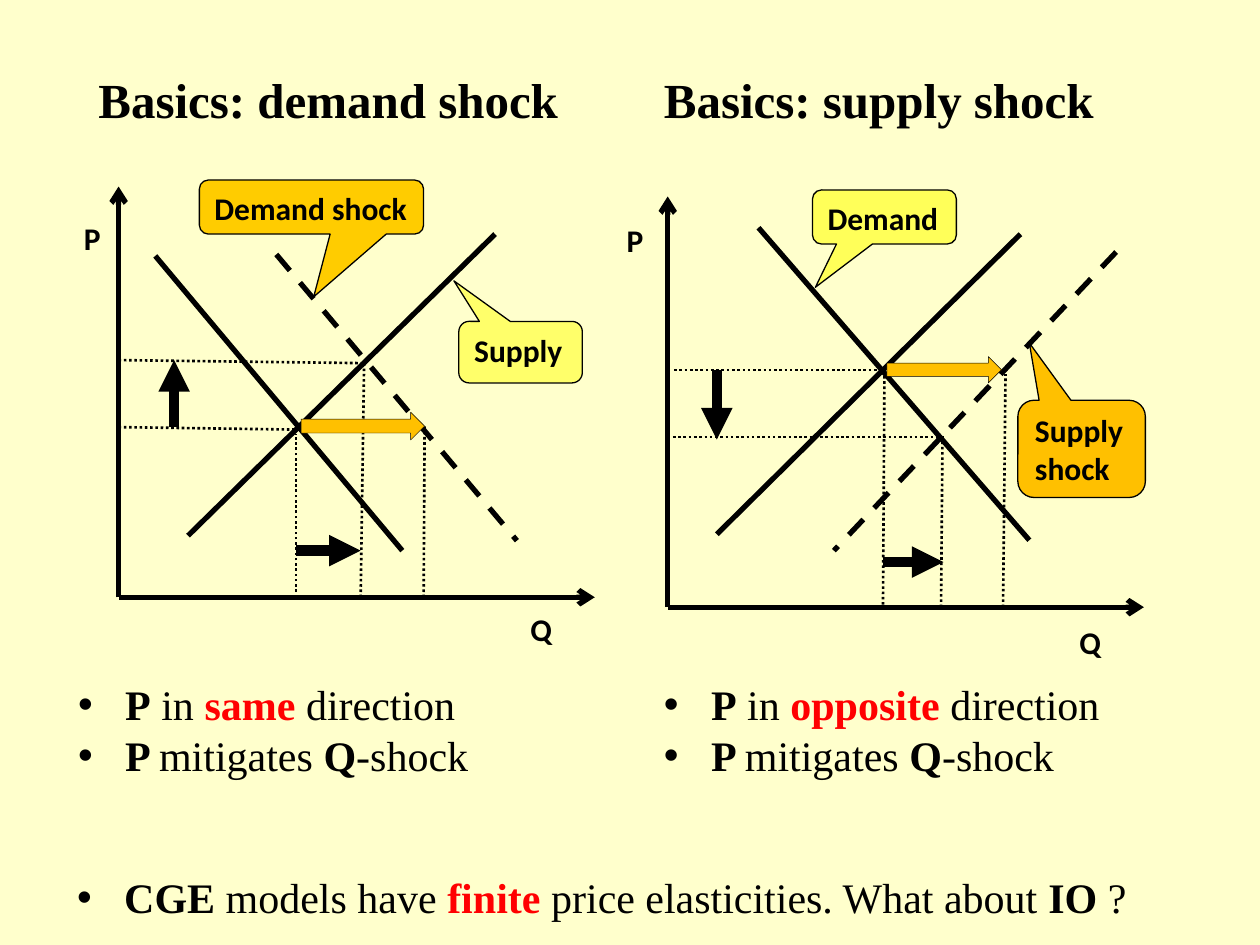
from dataclasses import dataclass

from lxml import etree
from pptx import Presentation
from pptx import util as u
from pptx.dml.color import RGBColor
from pptx.enum import dml, shapes, text
from pptx.oxml import ns


@dataclass(frozen=True)
class Theme:
    paper: str = "FFFFCC"
    ink: str = "000000"
    accent: str = "FF0000"
    shock: str = "FFC000"
    demand_shock: str = "FFCC00"
    supply: str = "FFFF6A"
    demand: str = "FFFF59"
    serif: str = "Times New Roman"
    sans: str = "Calibri"
    heading: float = 28
    body: float = 24
    label: float = 18


THEME = Theme()
CURVE = {"width": 3}
SHIFTED = {"width": 3, "dash": dml.MSO_LINE.DASH}
GUIDE = {"width": 1.5, "dash": dml.MSO_LINE.ROUND_DOT}
AXIS = {"width": 3, "head": "arrow"}
CHANGE = {"width": 6, "head": "triangle"}
AXIS_HEIGHT, AXIS_WIDTH = 8.28, 9.6

# Points are (right of, above) the origin of the axes, in cm.
# Callouts: text, left, top, width, height, tail x, tail y, fill, outlined.
DEMAND_MARKET = {
    "curves": [((0.74, 6.88), (5.72, 0.94)), ((7.59, 7.32), (1.4, 1.24))],
    "shifted": ((3.18, 6.91), (8.03, 1.14)),
    "guides": [((0, 3.43), (3.58, 3.38)), ((3.58, 0), (3.58, 3.3)),
               ((0, 4.78), (4.88, 4.72)), ((4.88, 0), (4.95, 4.72)),
               ((6.15, 0), (6.17, 3.45))],
    "changes": [((1.12, 3.43), (1.12, 4.78)), ((3.58, 0.94), (4.88, 0.94))],
    "shock": (3.68, 3.73, 2.49, 0.56),
    "callouts": [
        ("Demand shock", 1.63, 8.41, 4.52, 1.09, 0.01, 1.66, THEME.demand_shock, True),
        ("Supply", 6.86, 5.56, 2.49, 1.24, -0.54, -1.16, THEME.supply, True),
        ("P", -0.99, 7.8, 0.86, 0.99, -0.1, 0.02, THEME.paper, False),
        ("Q", 8, -0.08, 1.19, 1.07, -0.2, -0.17, THEME.paper, False)],
}
SUPPLY_MARKET = {
    "curves": [((1.83, 7.65), (7.29, 1.35)), ((7.11, 7.52), (0.99, 1.47))],
    "shifted": ((9.04, 7.16), (3.35, 1.14)),
    "guides": [((0.13, 4.78), (4.34, 4.78)), ((4.34, 0.05), (4.37, 4.78)),
               ((0, 3.43), (5.56, 3.43)), ((5.51, 0), (5.54, 3.43)),
               ((6.76, 0), (6.81, 4.7))],
    "changes": [((0.99, 4.78), (0.99, 3.38)), ((4.34, 0.91), (5.56, 0.91))],
    "shock": (4.42, 5.05, 2.31, 0.53),
    "callouts": [
        ("Demand", 2.92, 8.41, 2.9, 1.09, -0.48, 1.3, THEME.demand, True),
        ("Supply shock", 7.06, 4.17, 2.57, 1.96, -0.41, -1.09, THEME.shock, True),
        ("P", -1.12, 7.95, 0.86, 1.07, 0.02, -0.03, THEME.paper, False),
        ("Q", 8, -0.15, 1.04, 0.99, -0.05, -0.3, THEME.paper, False)],
}


def rgb(value):
    return RGBColor.from_string(value)


def add_run(paragraph, words, **look):
    run = paragraph.add_run()
    run.text = words
    run.font.color.rgb = rgb(look.pop("color", THEME.ink))
    for name, value in look.items():
        setattr(run.font, name, value)


def place(holder, box, **frame_format):
    """Move a placeholder to box and format its text frame."""
    for name, value in zip(("left", "top", "width", "height"), box):
        setattr(holder, name, u.Cm(value))
    for name, value in {"word_wrap": True, "margin_right": 0, **frame_format}.items():
        setattr(holder.text_frame, name, value)


def heading(holder, box, words):
    place(holder, box, vertical_anchor=text.MSO_ANCHOR.MIDDLE,
          auto_size=text.MSO_AUTO_SIZE.NONE)
    paragraph = holder.text_frame.paragraphs[0]
    paragraph.alignment = text.PP_ALIGN.LEFT
    paragraph.space_before = u.Pt(0)
    add_run(paragraph, words, name=THEME.serif, size=u.Pt(THEME.heading), bold=True)


def bullets(holder, box, points):
    """Fill a list; each point alternates bold and regular words, * marks the accent."""
    place(holder, box, vertical_anchor=text.MSO_ANCHOR.TOP,
          auto_size=text.MSO_AUTO_SIZE.SHAPE_TO_FIT_TEXT)
    frame = holder.text_frame
    for number, point in enumerate(points):
        paragraph = frame.paragraphs[0] if number == 0 else frame.add_paragraph()
        paragraph.alignment = text.PP_ALIGN.LEFT
        paragraph.space_before = u.Pt(0)
        props = paragraph._p.get_or_add_pPr()
        props.set("marL", str(u.Cm(0.95)))
        props.set("indent", str(-u.Cm(0.95)))
        etree.SubElement(props, ns.qn("a:buFont"), typeface="Arial")
        etree.SubElement(props, ns.qn("a:buChar"), char="•")
        for order, words in enumerate(point):
            color = THEME.accent if words.startswith("*") else THEME.ink
            add_run(paragraph, words.lstrip("*"), name=THEME.serif, color=color,
                    size=u.Pt(THEME.body), bold=order % 2 == 0)


def market(slide, left, base, content):
    """Draw one supply and demand diagram with its axes meeting at (left, base)."""
    parts = slide.shapes.add_group_shape().shapes

    def at(x, y):
        return u.Cm(left + x), u.Cm(base - y)

    def line(start, end, width, dash=None, head=None):
        stroke = parts.add_connector(shapes.MSO_CONNECTOR.STRAIGHT, *at(*start), *at(*end))
        stroke.line.color.rgb = rgb(THEME.ink)
        stroke.line.width = u.Pt(width)
        if dash:
            stroke.line.dash_style = dash
        outline = stroke.element.spPr.find(ns.qn("a:ln"))
        if head:
            etree.SubElement(outline, ns.qn("a:tailEnd"), type=head)
        etree.SubElement(stroke.element.spPr, ns.qn("a:effectLst"))

    def block(kind, x, y, width, height, fill, outline):
        shape = parts.add_shape(kind, *at(x, y), u.Cm(width), u.Cm(height))
        shape.shadow.inherit = False
        shape.fill.solid()
        shape.fill.fore_color.rgb = rgb(fill)
        if outline:
            shape.line.color.rgb = rgb(THEME.ink)
            shape.line.width = u.Pt(outline)
        else:
            shape.line.fill.background()
        return shape

    def callout(words, x, y, width, height, tail_x, tail_y, fill, outlined):
        bubble = block(shapes.MSO_SHAPE.ROUNDED_RECTANGULAR_CALLOUT, x, y, width, height,
                       fill, 0.75 if outlined else None)
        bubble.adjustments[0], bubble.adjustments[1] = tail_x, tail_y
        frame = bubble.text_frame
        for name, value in {"word_wrap": True, "margin_right": u.Cm(0.1),
                            "vertical_anchor": text.MSO_ANCHOR.TOP}.items():
            setattr(frame, name, value)
        frame.paragraphs[0].alignment = text.PP_ALIGN.LEFT
        frame.paragraphs[0].space_after = u.Pt(10)
        add_run(frame.paragraphs[0], words, name=THEME.sans, size=u.Pt(THEME.label), bold=True)

    for tip in ((0, AXIS_HEIGHT), (AXIS_WIDTH, 0)):
        line((0, 0), tip, **AXIS)
    for curve in content["curves"]:
        line(*curve, **CURVE)
    for label in content["callouts"]:
        callout(*label)
    line(*content["shifted"], **SHIFTED)
    for guide in content["guides"]:
        line(*guide, **GUIDE)
    block(shapes.MSO_SHAPE.RIGHT_ARROW, *content["shock"], THEME.shock, 0.25)
    for change in content["changes"]:
        line(*change, **CHANGE)


def main():
    deck = Presentation()
    deck.slide_width, deck.slide_height = u.Cm(25.4), u.Cm(19.05)
    slide = deck.slides.add_slide(deck.slide_layouts.get_by_name("Comparison"))
    slide.background.fill.solid()
    slide.background.fill.fore_color.rgb = rgb(THEME.paper)
    holders = slide.placeholders

    heading(holders[0], (1.73, 1.02, 11.23, 1.96), "Basics: demand shock")
    heading(holders[1], (13.13, 1.02, 10.59, 1.96), "Basics: supply shock")
    market(slide, 2.39, 12.04, DEMAND_MARKET)
    market(slide, 13.46, 12.24, SUPPLY_MARKET)
    mitigation = ("P ", "mitigates ", "Q", "-shock")
    bullets(holders[2], (1.32, 13.56, 10.67, 2.31),
            [("P", " in ", "*same ", "direction"), mitigation])
    bullets(holders[4], (13.13, 13.56, 11.56, 2.31),
            [("P", " in ", "*opposite ", "direction"), mitigation])
    bullets(holders[3], (1.3, 17.45, 21.74, 1.27),
            [("CGE ", "models have ", "*finite ",
              "price elasticities. What about ", "IO ", "?")])
    deck.save("out.pptx")


if __name__ == "__main__":
    main()
